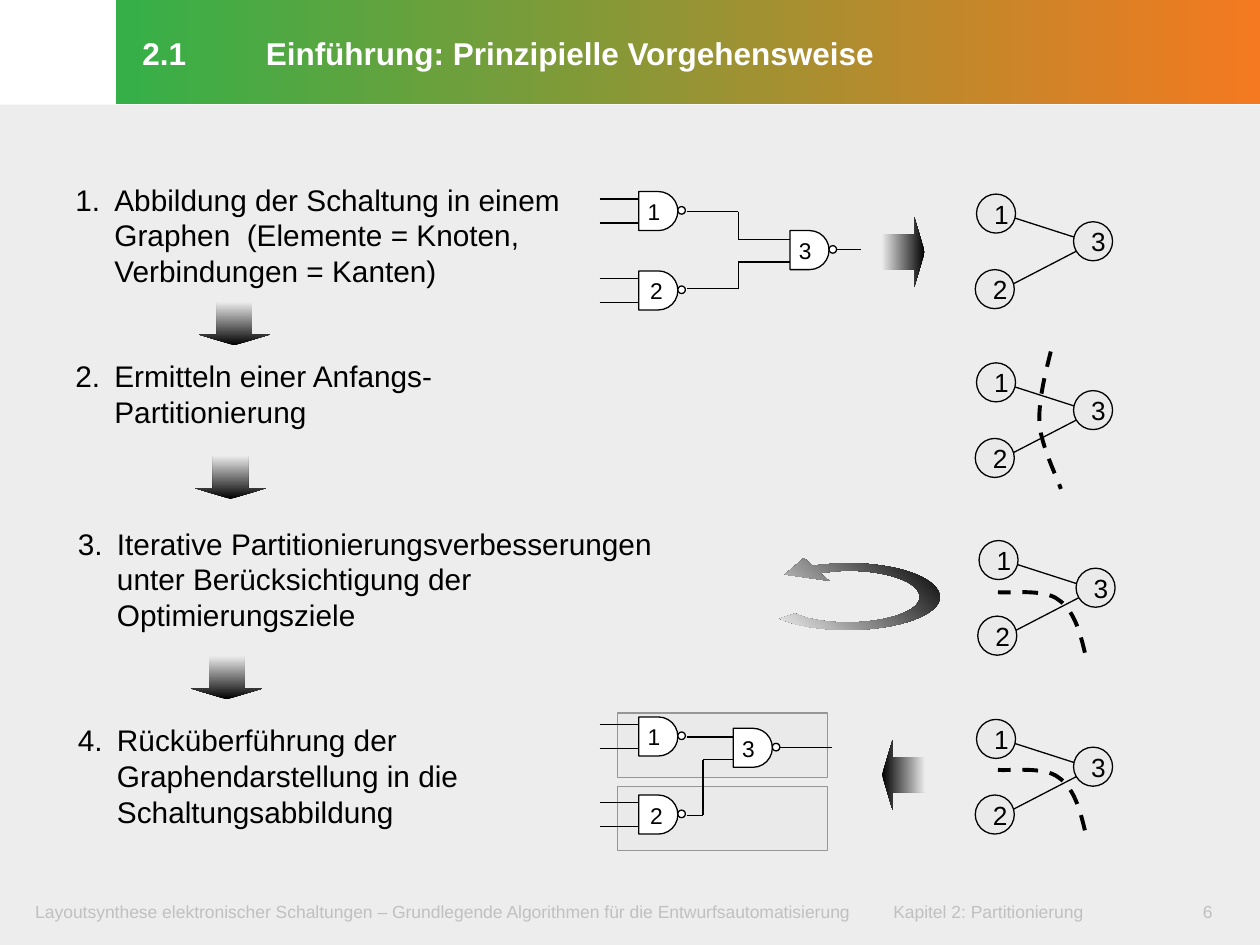
from itertools import pairwise

from lxml import etree
from pptx import Presentation, util as u
from pptx.dml import color
from pptx.enum import dml, shapes, text
from pptx.oxml import ns

COLORS = {
    "black": "000000", "white": "FFFFFF", "page": "EDEDED", "light": "EAEAEA",
    "frame": "969696", "footer": "C0C0C0", "green": "35B048", "orange": "F47920",
}
SHADE = ("black", "light")
KIND = shapes.MSO_SHAPE

presentation = Presentation()
presentation.slide_width, presentation.slide_height = u.Inches(10), u.Inches(7.5)
slide = presentation.slides.add_slide(presentation.slide_layouts[6])


def style_shape(shape, fill=None, line=None, width=0.75, angle=0):
    """Fill is None, a colour name, or a pair of names for a gradient."""
    shape.shadow.inherit = False
    if fill is None:
        shape.fill.background()
    elif isinstance(fill, tuple):
        shape.fill.gradient()
        shape.fill.gradient_angle = angle
        for stop, name in zip(shape.fill.gradient_stops, fill):
            stop.color.rgb = color.RGBColor.from_string(COLORS[name])
    else:
        shape.fill.solid()
        shape.fill.fore_color.rgb = color.RGBColor.from_string(COLORS[fill])
    if line:
        shape.line.color.rgb = color.RGBColor.from_string(COLORS[line])
        shape.line.width = u.Pt(width)
    else:
        shape.line.fill.background()


def write_text(shape, words, size=17, ink="black", bold=False, align="LEFT",
               anchor="TOP", insets=(0.1, 0.05, 0.1, 0.05), wrap=True,
               spacing=None, tab=None, number=None):
    frame = shape.text_frame
    frame.word_wrap = wrap
    frame.vertical_anchor = text.MSO_ANCHOR[anchor]
    (frame.margin_left, frame.margin_top,
     frame.margin_right, frame.margin_bottom) = map(u.Inches, insets)
    paragraph = frame.paragraphs[0]
    paragraph.text = words
    paragraph.alignment = text.PP_ALIGN[align]
    if spacing:
        paragraph.line_spacing = spacing
    properties = paragraph._p.get_or_add_pPr()
    if number:
        properties.set("marL", str(u.Inches(0.31)))
        properties.set("indent", str(u.Inches(-0.31)))
        etree.SubElement(properties, ns.qn("a:buAutoNum"),
                         type="arabicPeriod", startAt=str(number))
    if tab:
        tabs = etree.SubElement(properties, ns.qn("a:tabLst"))
        etree.SubElement(tabs, ns.qn("a:tab"), pos=str(u.Inches(tab)), algn="l")
    for run in paragraph.runs:
        run.font.name, run.font.size, run.font.bold = "Arial", u.Pt(size), bold
        run.font.color.rgb = color.RGBColor.from_string(COLORS[ink])


# Page background and title bar
background = slide.shapes.add_shape(
    KIND.RECTANGLE, *map(u.Inches, (0, 0.83, 10, 6.67)))
style_shape(background, "page")
title = slide.shapes.add_shape(KIND.RECTANGLE, *map(u.Inches, (0.92, 0, 9.08, 0.83)))
style_shape(title, ("green", "orange"))
write_text(title, "2.1 \tEinführung: Prinzipielle Vorgehensweise", size=18, ink="white",
           bold=True, anchor="MIDDLE", insets=(0.21, 0.05, 0.1, 0.07),
           spacing=u.Pt(23.5), tab=0.98)

# Footer
footer = ("Layoutsynthese elektronischer Schaltungen – Grundlegende Algorithmen "
          "für die Entwurfsautomatisierung\tKapitel 2: Partitionierung")
for left, width, words, align, tab in [(0.16, 9.13, footer, "LEFT", 6.81),
                                       (9.29, 0.59, "6", "CENTER", None)]:
    box = slide.shapes.add_textbox(*map(u.Inches, (left, 7.09, width, 0.32)))
    write_text(box, words, size=10, ink="footer", align=align,
               insets=(0.12, 0.06, 0.12, 0.06), tab=tab)

# Numbered steps
steps = [
    (0.5, 1.39, 4.67, 0.94, "Abbildung der Schaltung in einem\v"
     "Graphen  (Elemente = Knoten, Verbindungen = Kanten)"),
    (0.5, 2.79, 4.67, 0.66, "Ermitteln einer Anfangs-\vPartitionierung"),
    (0.52, 4.12, 4.89, 0.94, "Iterative Partitionierungsverbesserungen\v"
     "unter Berücksichtigung der Optimierungsziele"),
    (0.52, 5.68, 3.89, 0.94, "Rücküberführung der Graphendarstellung in die "
     "Schaltungsabbildung"),
]
for number, (*place, words) in enumerate(steps, 1):
    box = slide.shapes.add_textbox(*map(u.Inches, place))
    write_text(box, words, number=number)

# Block arrows between the steps
for left, top, rotation in [(1.69, 2.29, 270), (1.66, 3.51, 270), (1.63, 5.1, 270),
                            (7, 1.72, 180), (7, 5.87, 0)]:
    arrow = slide.shapes.add_shape(
        KIND.LEFT_ARROW, *map(u.Inches, (left, top, 0.34, 0.56)))
    arrow.adjustments[0], arrow.adjustments[1] = 0.5, 0.25
    arrow.rotation = rotation
    style_shape(arrow, SHADE)

# Partition frames around the final circuit
for top in (6.24, 5.66):
    frame = slide.shapes.add_shape(
        KIND.RECTANGLE, *map(u.Inches, (4.9, top, 1.67, 0.51)))
    style_shape(frame, "light", "frame")

# Wires of both circuits, then edges of the four graphs
gates = [("1", 5.07, 1.52), ("2", 5.07, 2.15), ("3", 6.27, 1.83),
         ("1", 5.07, 5.69), ("2", 5.07, 6.31), ("3", 5.82, 5.78)]
graphs = [(7.75, 1.54), (7.75, 2.88), (7.77, 4.29), (7.75, 5.71)]
wires = [
    [(5.45, 1.68), (5.86, 1.68), (5.86, 1.9), (6.27, 1.9)],
    [(5.45, 2.29), (5.86, 2.29), (5.86, 2.08), (6.27, 2.08)],
    [(6.63, 1.98), (6.83, 1.98)],
    [(5.45, 5.85), (5.86, 5.85)],
    [(5.45, 6.47), (5.58, 6.47), (5.58, 6.03), (5.82, 6.03)],
    [(6.18, 5.93), (6.6, 5.93)],
]
for label, left, top in gates:
    if label != "3":
        wires += [[(4.76, top + drop), (left, top + drop)] for drop in (0.06, 0.25)]
for left, top in graphs:
    wires += [[(left + 0.24, top + 0.17), (left + 0.8, top + 0.35)],
              [(left + 0.24, top + 0.74), (left + 0.8, top + 0.45)]]
for wire in wires:
    for start, end in pairwise(wire):
        connector = slide.shapes.add_connector(
            shapes.MSO_CONNECTOR.STRAIGHT, *map(u.Inches, start + end))
        connector.line.color.rgb = color.RGBColor.from_string(COLORS["black"])
        connector.line.width = u.Pt(0.75)
        etree.SubElement(connector._element.spPr, ns.qn("a:effectLst"))

# NAND gates: body, output bubble and label
for label, left, top in gates:
    for kind, place in [(KIND.FLOWCHART_DELAY, (left, top, 0.31, 0.31)),
                        (KIND.OVAL, (left + 0.31, top + 0.12, 0.06, 0.06))]:
        part = slide.shapes.add_shape(kind, *map(u.Inches, place))
        style_shape(part, "white", "black")
    box = slide.shapes.add_textbox(
        *map(u.Inches, (left + (0.05 if label == "2" else 0.03), top + 0.04, 0.21, 0.24)))
    write_text(box, label, size=13, insets=(0.04, 0.01, 0.04, 0.01))

# Graph nodes with their labels
for left, top in graphs:
    for label, right, down in [("1", 0, 0), ("2", -0.01, 0.6), ("3", 0.77, 0.22)]:
        x, y = left + right, top + down
        node = slide.shapes.add_shape(KIND.OVAL, *map(u.Inches, (x, y, 0.31, 0.31)))
        style_shape(node, "light", "black")
        box = slide.shapes.add_textbox(
            *map(u.Inches, (x + 0.03, y + 0.03, 0.25, 0.25)))
        write_text(box, label, size=15, align="CENTER", anchor="MIDDLE",
                   insets=(0.11, 0.05, 0.11, 0.05), wrap=False)

# Iteration arrow and partition cuts: pairs are line ends, sixes are Bézier curves
iteration = [
    (6.51, 4.55), (6.58, 4.54, 6.66, 4.53, 6.73, 4.53),
    (7.04, 4.53, 7.3, 4.62, 7.3, 4.74), (7.3, 4.85, 7.04, 4.94, 6.73, 4.94),
    (6.57, 4.94, 6.42, 4.92, 6.31, 4.87), (6.19, 4.91),
    (6.32, 4.97, 6.52, 5, 6.73, 5), (7.13, 5, 7.46, 4.88, 7.46, 4.74),
    (7.46, 4.59, 7.13, 4.47, 6.73, 4.47), (6.63, 4.47, 6.54, 4.48, 6.45, 4.49),
    (6.38, 4.43), (6.23, 4.56), (6.58, 4.61), (6.51, 4.55),
]
first_cut = [(8.34, 2.79), (8.29, 2.99, 8.24, 3.19, 8.25, 3.37),
             (8.27, 3.55, 8.39, 3.79, 8.42, 3.88)]
improved_cut = [(8.61, 5.18), (8.57, 5.01, 8.52, 4.84, 8.4, 4.76),
                (8.29, 4.67, 8, 4.71, 7.92, 4.7)]
for outline, shift in [(iteration, 0), (first_cut, 0),
                       (improved_cut, 0), (improved_cut, 1.41)]:
    ends = [(u.Inches(x), u.Inches(y + shift)) for *_, x, y in outline]
    closed = outline is iteration
    builder = slide.shapes.build_freeform(*ends[0])
    builder.add_line_segments(ends[1:], close=closed)
    shape = builder.convert_to_shape()
    lines = list(shape._element.iter(ns.qn("a:lnTo")))
    for line, segment in zip(lines, outline[1:]):
        if len(segment) == 6:
            line.tag = ns.qn("a:cubicBezTo")
            controls = (segment[:2], segment[2:4])
            for position, (x, y) in enumerate(controls):
                point = etree.Element(
                    ns.qn("a:pt"), x=str(u.Inches(x) - shape.left),
                    y=str(u.Inches(y + shift) - shape.top))
                line.insert(position, point)
    if closed:
        style_shape(shape, SHADE, angle=225)
    else:
        style_shape(shape, line="black", width=2.25)
        shape.line.dash_style = dml.MSO_LINE.DASH

presentation.save("out.pptx")
